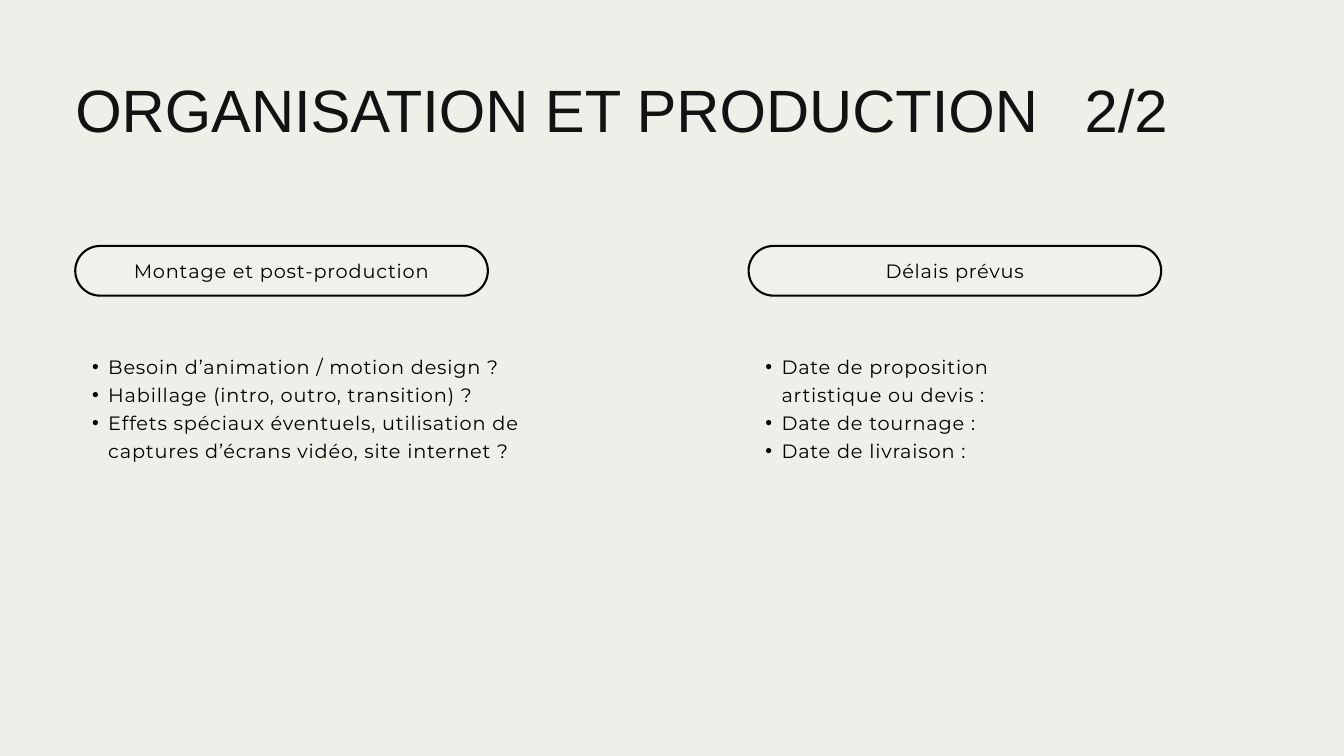
from lxml import etree
from pptx import Presentation
from pptx.dml.color import RGBColor
from pptx.enum.shapes import MSO_SHAPE
from pptx.enum.text import MSO_ANCHOR, PP_ALIGN
from pptx.oxml.ns import qn
from pptx.util import Inches, Pt

PILL = MSO_SHAPE.ROUNDED_RECTANGLE
MIDDLE = MSO_ANCHOR.MIDDLE
LEFT, CENTER = PP_ALIGN.LEFT, PP_ALIGN.CENTER

COLORS = {"back": "EFEEE8", "pill": "F1F0EA", "title": "121212", "ink": "000000"}
MARGIN = 1.12
COLUMN_STEP = 10.02
COLUMNS = [
    ("Montage et post-production", 7.15, [
        "Besoin d’animation / motion design ?",
        "Habillage (intro, outro, transition) ?",
        "Effets spéciaux éventuels, utilisation de captures d’écrans vidéo, site internet ?",
    ]),
    ("Délais prévus", 4.5, [
        "Date de proposition artistique ou devis :",
        "Date de tournage :",
        "Date de livraison :",
    ]),
]


def color(name):
    """Return the named colour."""
    return RGBColor.from_string(COLORS[name])


def set_frame(frame, bottom=0):
    """Wrap the text and clear the insets, except for the bottom one."""
    frame.word_wrap = True
    frame.margin_left = frame.margin_right = frame.margin_top = 0
    frame.margin_bottom = Inches(bottom)


def style_line(line, size, face, ink, spacing, align=LEFT):
    """Format a paragraph and its runs."""
    line.alignment = align
    line.line_spacing = Pt(spacing)
    for run in line.runs:
        run.font.size = Pt(size)
        run.font.name = face
        run.font.color.rgb = color(ink)


def style_body(line, align=LEFT):
    """Format a paragraph as spaced body text."""
    style_line(line, 20.7, "Montserrat", "ink", 30, align)
    for run in line.runs:
        run._r.get_or_add_rPr().set("spc", "90")


def add_box(slide, left, top, width, height):
    """Add an empty text box and return its frame."""
    box = slide.shapes.add_textbox(Inches(left), Inches(top), Inches(width), Inches(height))
    set_frame(box.text_frame)
    return box.text_frame


def add_title(slide, title, page):
    """Add the heading with its page count at a tab stop."""
    line = add_box(slide, MARGIN, 1.26, 17.75, 0.93).paragraphs[0]
    line.text = f"{title}\t{page}"
    tabs = etree.SubElement(line._p.get_or_add_pPr(), qn("a:tabLst"))
    etree.SubElement(tabs, qn("a:tab"), pos=str(Inches(15.02)), algn="l")
    style_line(line, 64, "Arial", "title", 64)


def add_pill(slide, left, label):
    """Add an outlined pill with a centred label."""
    pill = slide.shapes.add_shape(PILL, Inches(left), Inches(3.66), Inches(6.14), Inches(0.74))
    pill.adjustments[0] = 0.5
    pill.shadow.inherit = False
    pill.fill.solid()
    pill.fill.fore_color.rgb = color("pill")
    pill.line.color.rgb = color("ink")
    pill.line.width = Pt(2.25)
    frame = pill.text_frame
    set_frame(frame, 0.08)
    frame.vertical_anchor = MIDDLE
    frame.text = label
    style_body(frame.paragraphs[0], CENTER)


def add_list(slide, left, width, items):
    """Add a bulleted list."""
    frame = add_box(slide, left, 5.22, width, 2.06)
    frame.text = "\n".join(items)
    for line in frame.paragraphs:
        line.level = 1
        props = line._p.get_or_add_pPr()
        props.set("marL", str(Inches(0.49)))
        props.set("indent", str(Inches(-0.24)))
        etree.SubElement(props, qn("a:buFont"), typeface="Arial")
        etree.SubElement(props, qn("a:buChar"), char="•")
        style_body(line)


def main():
    """Build and save the slide."""
    deck = Presentation()
    deck.slide_width, deck.slide_height = Inches(20), Inches(11.25)
    slide = deck.slides.add_slide(deck.slide_layouts[6])
    slide.background.fill.solid()
    slide.background.fill.fore_color.rgb = color("back")
    add_title(slide, "ORGANISATION ET PRODUCTION", "2/2")
    for index, (label, width, items) in enumerate(COLUMNS):
        left = MARGIN + index * COLUMN_STEP
        add_pill(slide, left, label)
        add_list(slide, left, width, items)
    deck.save("out.pptx")


if __name__ == "__main__":
    main()
